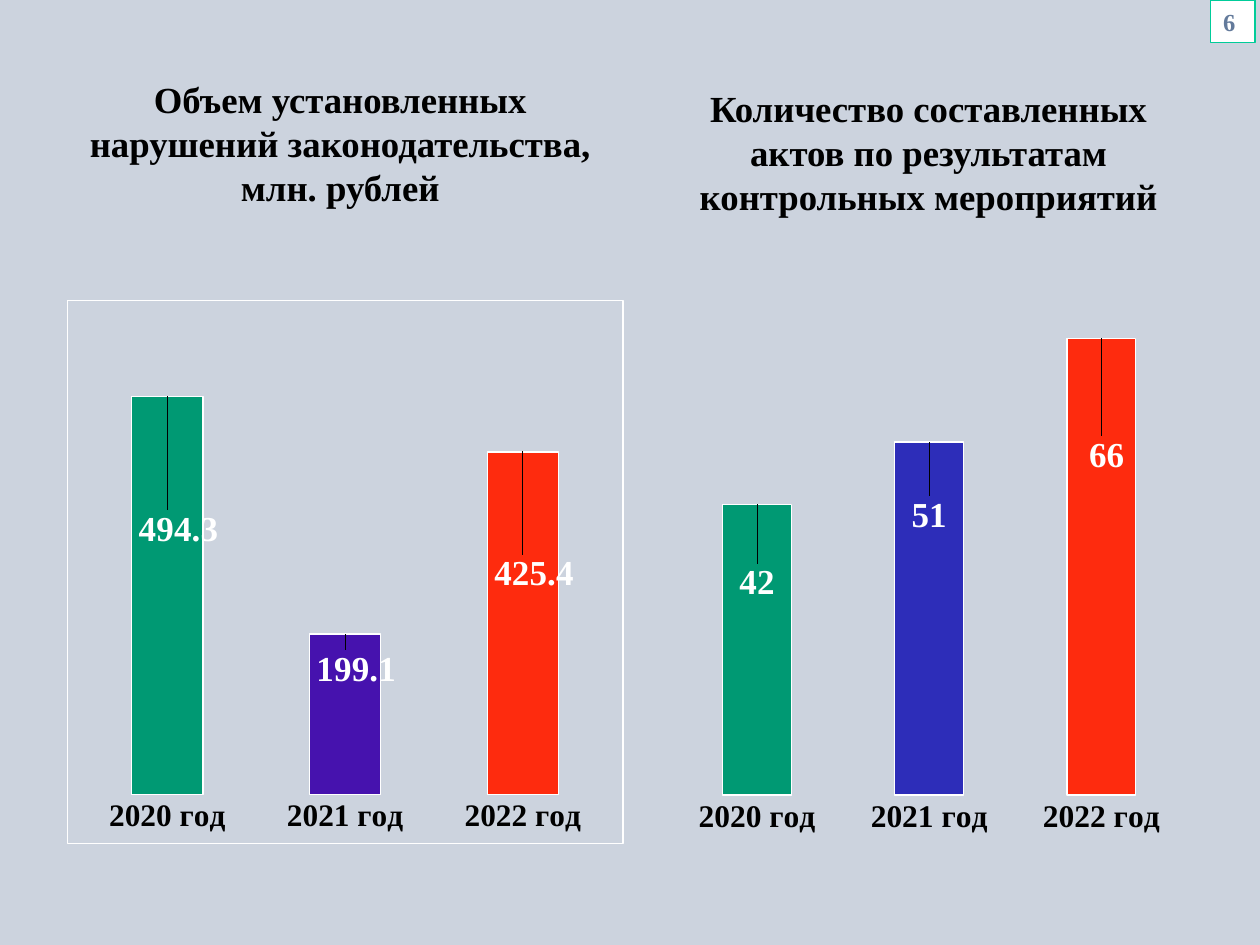
from dataclasses import dataclass

from lxml import etree
from pptx import Presentation
from pptx import util as u
from pptx.chart.data import CategoryChartData
from pptx.dml.color import RGBColor
from pptx.enum import chart as charts, shapes, text
from pptx.oxml import parse_xml

Inches = u.Inches
CHART_NS = ('xmlns:c="http://schemas.openxmlformats.org/drawingml/2006/chart" '
            'xmlns:a="http://schemas.openxmlformats.org/drawingml/2006/main"')


@dataclass(frozen=True)
class Theme:
    font: str = "Times New Roman"
    background: str = "CCD3DE"
    ink: str = "000000"
    white: str = "FFFFFF"
    accent: str = "00CC99"
    number: str = "637A9B"
    green: str = "009973"
    violet: str = "4612AE"
    blue: str = "2D2DB9"
    red: str = "FE2B0E"
    title_size: int = 21
    value_size: int = 20
    category_size: int = 18
    number_size: int = 14
    chart_size: int = 10
    line_width: float = 0.75


THEME = Theme()
YEARS = ("2020 год", "2021 год", "2022 год")


def color(value):
    return RGBColor.from_string(value)


def set_font(font, size, ink, bold=True):
    font.name = THEME.font
    font.size = u.Pt(size)
    font.bold = bold
    font.color.rgb = color(ink)


def set_line(line, ink):
    line.color.rgb = color(ink)
    line.width = u.Pt(THEME.line_width)


def add_title(slide, left, top, width, height, words):
    frame = slide.shapes.add_textbox(
        Inches(left), Inches(top), Inches(width), Inches(height)).text_frame
    frame.word_wrap = True
    frame.vertical_anchor = text.MSO_ANCHOR.BOTTOM
    para = frame.paragraphs[0]
    para.text = words
    para.alignment = text.PP_ALIGN.CENTER
    set_font(para.font, THEME.title_size, THEME.ink)


def add_page_number(slide, number):
    box = slide.shapes.add_shape(
        shapes.MSO_SHAPE.RECTANGLE, Inches(9.61), 0, Inches(0.35), Inches(0.34))
    box.shadow.inherit = False
    box.fill.solid()
    box.fill.fore_color.rgb = color(THEME.white)
    set_line(box.line, THEME.accent)
    box.text_frame.vertical_anchor = text.MSO_ANCHOR.MIDDLE
    para = box.text_frame.paragraphs[0]
    para.text = number
    para.alignment = text.PP_ALIGN.LEFT
    set_font(para.font, THEME.number_size, THEME.number)


def layout_xml(x, y, size=""):
    return parse_xml(f'<c:layout {CHART_NS}><c:manualLayout>{size}'
                     f'<c:x val="{x}"/><c:y val="{y}"/>'
                     '</c:manualLayout></c:layout>')


def fix_plot_area(chart):
    """Give the inner plot area a fixed place within the chart."""
    area = chart._chartSpace.chart.plotArea
    for old in area.xpath("c:layout"):
        area.remove(old)
    modes = ('<c:layoutTarget val="inner"/><c:xMode val="edge"/>'
             '<c:yMode val="edge"/>')
    layout = layout_xml(0.02, 0.02, modes)
    for tag, share in (("w", 0.96), ("h", 0.89)):
        etree.SubElement(layout[0], layout.tag.replace("layout", tag), val=str(share))
    area.insert(0, layout)


def set_border(chart, ink):
    """Leave the chart unfilled, with a border if a colour is given."""
    stroke = (f'<a:solidFill><a:srgbClr val="{ink}"/></a:solidFill>'
              if ink else "<a:noFill/>")
    chart._chartSpace.chart.addnext(parse_xml(
        f'<c:spPr {CHART_NS}><a:noFill/>'
        f'<a:ln w="{u.Pt(THEME.line_width)}">{stroke}</a:ln></c:spPr>'))


def set_leader_lines(labels, shown):
    labels._element.append(parse_xml(
        f'<c:extLst {CHART_NS}><c:ext uri="{{CE6537A1-D6FC-4f65-9D91-7224C49458BB}}" '
        'xmlns:c15="http://schemas.microsoft.com/office/drawing/2012/chart">'
        f'<c15:showLeaderLines val="{int(shown)}"/></c:ext></c:extLst>'))


def style_point(point, fill, shift):
    """Colour one column and move its label by shares of the chart size."""
    point.format.fill.solid()
    point.format.fill.fore_color.rgb = color(fill)
    set_line(point.format.line, THEME.white)
    label = point.data_label
    set_font(label.font, THEME.value_size, THEME.white)
    label.position = charts.XL_LABEL_POSITION.OUTSIDE_END
    label._dLbl.insert(1, layout_xml(*shift))


def style_axes(chart, maximum):
    axis = chart.category_axis
    axis.major_tick_mark = charts.XL_TICK_MARK.NONE
    axis.format.line.fill.background()
    set_font(axis.tick_labels.font, THEME.category_size, THEME.ink)
    chart.value_axis.visible = False
    chart.value_axis.has_major_gridlines = False
    chart.value_axis.minimum_scale = 0
    chart.value_axis.maximum_scale = maximum


def add_columns(slide, left, width, values, fills, shifts, maximum,
                border=None, leaders=False):
    data = CategoryChartData()
    data.categories = YEARS
    data.add_series("Series 1", values)
    chart = slide.shapes.add_chart(
        charts.XL_CHART_TYPE.COLUMN_CLUSTERED, Inches(left), Inches(2.38),
        Inches(width), Inches(4.32), data).chart
    chart.has_legend = False
    chart.has_title = False
    set_font(chart.font, THEME.chart_size, THEME.ink, bold=False)
    set_border(chart, border)
    fix_plot_area(chart)
    style_axes(chart, maximum)

    plot = chart.plots[0]
    plot.gap_width = 150
    plot.vary_by_categories = False
    series = plot.series[0]
    series.format.fill.solid()
    series.format.fill.fore_color.rgb = color(THEME.accent)
    set_line(series.format.line, THEME.white)
    labels = series.data_labels
    labels.show_value = True
    set_font(labels.font, THEME.value_size, THEME.white)
    for index, (fill, shift) in enumerate(zip(fills, shifts)):
        style_point(series.points[index], fill, shift)
    set_leader_lines(labels, leaders)


def main():
    deck = Presentation()
    deck.slide_width, deck.slide_height = Inches(10), Inches(7.5)
    slide = deck.slides.add_slide(deck.slide_layouts[6])
    slide.background.fill.solid()
    slide.background.fill.fore_color.rgb = color(THEME.background)

    add_title(slide, 0.49, 1.01, 4.42, 0.7,
              "Объем установленных нарушений законодательства, млн. рублей")
    add_title(slide, 5.16, 0.8, 4.42, 0.98,
              "Количество составленных актов по результатам контрольных мероприятий")
    add_columns(slide, 5.24, 4.27, (42, 51, 66),
                (THEME.green, THEME.blue, THEME.red),
                ((0, 0.19), (0, 0.18), (0.01, 0.26)), maximum=70)
    add_columns(slide, 0.53, 4.42, (494.3, 199.1, 425.4),
                (THEME.green, THEME.violet, THEME.red),
                ((0.02, 0.29), (0.02, 0.11), (0.02, 0.27)), maximum=600,
                border=THEME.white, leaders=True)
    add_page_number(slide, "6")
    deck.save("out.pptx")


if __name__ == "__main__":
    main()
